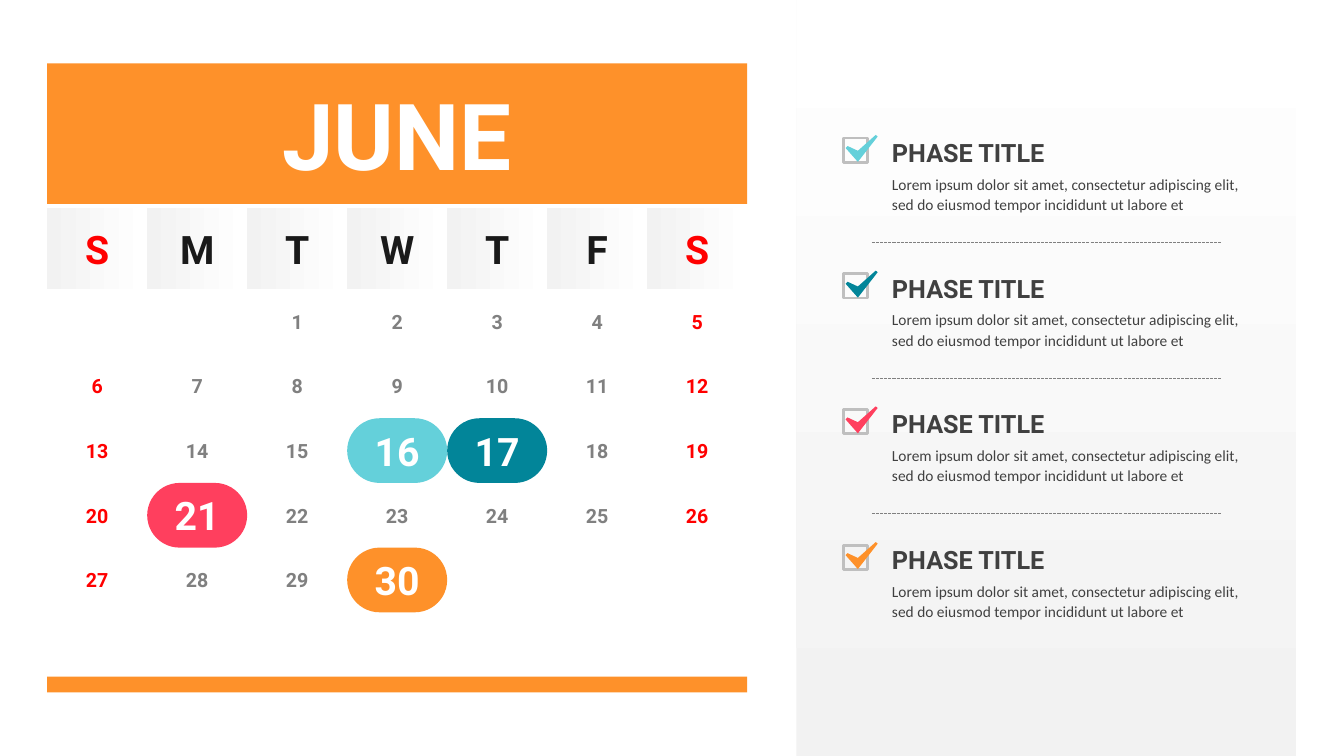
from dataclasses import dataclass

import pptx
import pptx.dml.color
import pptx.enum.dml
import pptx.enum.shapes
import pptx.enum.text
import pptx.oxml
import pptx.util

Cm, Pt = pptx.util.Cm, pptx.util.Pt
SHAPE = pptx.enum.shapes.MSO_SHAPE
ALIGN = pptx.enum.text.PP_ALIGN
ANCHOR = pptx.enum.text.MSO_ANCHOR
AUTO = pptx.enum.text.MSO_AUTO_SIZE


@dataclass(frozen=True)
class Theme:
    head: str = "Roboto"
    body: str = "Calibri"
    orange: str = "FE912A"
    aqua: str = "64D0DA"
    teal: str = "028599"
    pink: str = "FF3F5E"
    red: str = "FF0000"
    white: str = "FFFFFF"
    pale: str = "F2F2F2"
    black: str = "1A1A1A"
    dark: str = "404040"
    gray: str = "808080"
    outline: str = "BFBFBF"
    month_pt: int = 66
    big_pt: int = 28
    phase_pt: int = 18
    day_pt: int = 14
    body_pt: int = 11


T = Theme()
WEEKDAYS = "SMTWTFS"
FIRST_COLUMN, DAYS = 2, 30
MARKED = {16: T.aqua, 17: T.teal, 21: T.pink, 30: T.orange}
PHASE_TEXT = ("Lorem ipsum dolor sit amet, consectetur adipiscing elit, "
              "sed do eiusmod tempor incididunt ut labore et")
PHASES = [(color, "PHASE TITLE", PHASE_TEXT) for color in MARKED.values()]
# Check mark outline in cm, from the top left of its box
TICK = [(0.81, -0.08), (0.86, -0.04), (0.36, 0.6),
        (0.05, 0.25), (0.1, 0.2), (0.36, 0.32)]


def rgb(color):
    return pptx.dml.color.RGBColor.from_string(color)


def place(sp, x, y, w, h):
    sp.left, sp.top, sp.width, sp.height = Cm(x), Cm(y), Cm(w), Cm(h)


def paint(sp, color):
    sp.fill.solid()
    sp.fill.fore_color.rgb = rgb(color)


def fade(sp, angle):
    sp.fill.gradient()
    sp.fill.gradient_angle = angle
    for stop, color in zip(sp.fill.gradient_stops, (T.pale, T.white)):
        stop.color.rgb = rgb(color)


def add_shape(s, kind, x, y, w, h):
    sp = s.shapes.add_shape(kind, Cm(x), Cm(y), Cm(w), Cm(h))
    sp.shadow.inherit = False
    sp.line.fill.background()
    return sp


def add_text_box(s, x, y, w, h):
    return s.shapes.add_textbox(Cm(x), Cm(y), Cm(w), Cm(h))


def frame(sp):
    tf = sp.text_frame
    tf.word_wrap = True
    tf.margin_left = tf.margin_top = tf.margin_right = tf.margin_bottom = 0
    return tf


def add_run(p, text, size, color, font=T.head, bold=True):
    r = p.add_run()
    r.text = text
    r.font.name, r.font.size, r.font.bold = font, Pt(size), bold
    r.font.color.rgb = rgb(color)


def label(sp, text, size, color):
    tf = frame(sp)
    tf.auto_size = AUTO.NONE
    tf.vertical_anchor = ANCHOR.MIDDLE
    p = tf.paragraphs[0]
    p.alignment = ALIGN.CENTER
    add_run(p, text, size, color)


def calendar(s, x, y, w):
    col_w, row_h = w / 7, 1.63

    # Month banner
    title = s.shapes.title
    place(title, x, y, w, 3.54)
    paint(title, T.orange)
    label(title, "JUNE", T.month_pt, T.white)

    # Weekday header
    for col, name in enumerate(WEEKDAYS):
        sp = add_shape(s, SHAPE.RECTANGLE, x + col * col_w, y + 3.64, col_w, 2.04)
        fade(sp, 0)
        label(sp, name, T.big_pt, T.red if col in (0, 6) else T.black)

    # Days
    for day in range(1, DAYS + 1):
        row, col = divmod(day - 1 + FIRST_COLUMN, 7)
        box = x + col * col_w, y + 5.68 + row * row_h, col_w, row_h
        if day in MARKED:
            sp = add_shape(s, SHAPE.ROUNDED_RECTANGLE, *box)
            sp.adjustments[0] = 0.5
            paint(sp, MARKED[day])
            label(sp, str(day), T.big_pt, T.white)
        else:
            sp = add_text_box(s, *box)
            label(sp, str(day), T.day_pt, T.red if col in (0, 6) else T.gray)

    # Bottom bar
    paint(add_shape(s, SHAPE.RECTANGLE, x, y + 15.45, w, 0.4), T.orange)


def checkbox(s, x, y, color):
    box = add_shape(s, SHAPE.RECTANGLE, x, y, 0.61, 0.61)
    box.fill.background()
    box.line.color.rgb = rgb(T.outline)
    box.line.width = Pt(2)

    points = [(Cm(x + dx), Cm(y + dy)) for dx, dy in TICK]
    fb = s.shapes.build_freeform(*points[0])
    fb.add_line_segments(points[1:], close=True)
    tick = fb.convert_to_shape()
    tick.shadow.inherit = False
    tick.line.fill.background()
    paint(tick, color)


def divider(s, x, y, w):
    line = s.shapes.add_connector(pptx.enum.shapes.MSO_CONNECTOR.STRAIGHT,
                                  Cm(x), Cm(y), Cm(x + w), Cm(y))
    line.line.color.rgb = rgb(T.gray)
    line.line.width = Pt(0.75)
    line.line.dash_style = pptx.enum.dml.MSO_LINE.SQUARE_DOT
    line._element.spPr.append(pptx.oxml.parse_xml(
        '<a:effectLst xmlns:a="http://schemas.openxmlformats.org/drawingml/2006/main"/>'))


def phase(s, x, y, color, title, text):
    checkbox(s, x + 1.19, y + 0.1, color)
    tf = frame(add_text_box(s, x + 2.41, y, 8.99, 2.03))
    tf.auto_size = AUTO.SHAPE_TO_FIT_TEXT
    heading, body = tf.paragraphs[0], tf.add_paragraph()
    for p in (heading, body):
        p.line_spacing, p.space_before = 1.1, Pt(4)
    add_run(heading, title, T.phase_pt, T.dark)
    add_run(body, text, T.body_pt, T.dark, T.body, False)


def phase_panel(s, x, y, w, h):
    fade(add_shape(s, SHAPE.RECTANGLE, x, y, w, h), 90)
    for i, item in enumerate(PHASES):
        top = y + 3.38 + i * 3.42
        phase(s, x, top, *item)
        if i < len(PHASES) - 1:
            divider(s, x + 1.9, top + 2.73, 8.79)


def main():
    prs = pptx.Presentation()
    prs.slide_width, prs.slide_height = Cm(33.87), Cm(19.05)
    s = prs.slides.add_slide(prs.slide_layouts.get_by_name("Title Only"))
    calendar(s, 1.19, 1.6, 17.64)
    phase_panel(s, 20.07, 0, 12.6, 19.05)
    prs.save("out.pptx")


if __name__ == "__main__":
    main()
